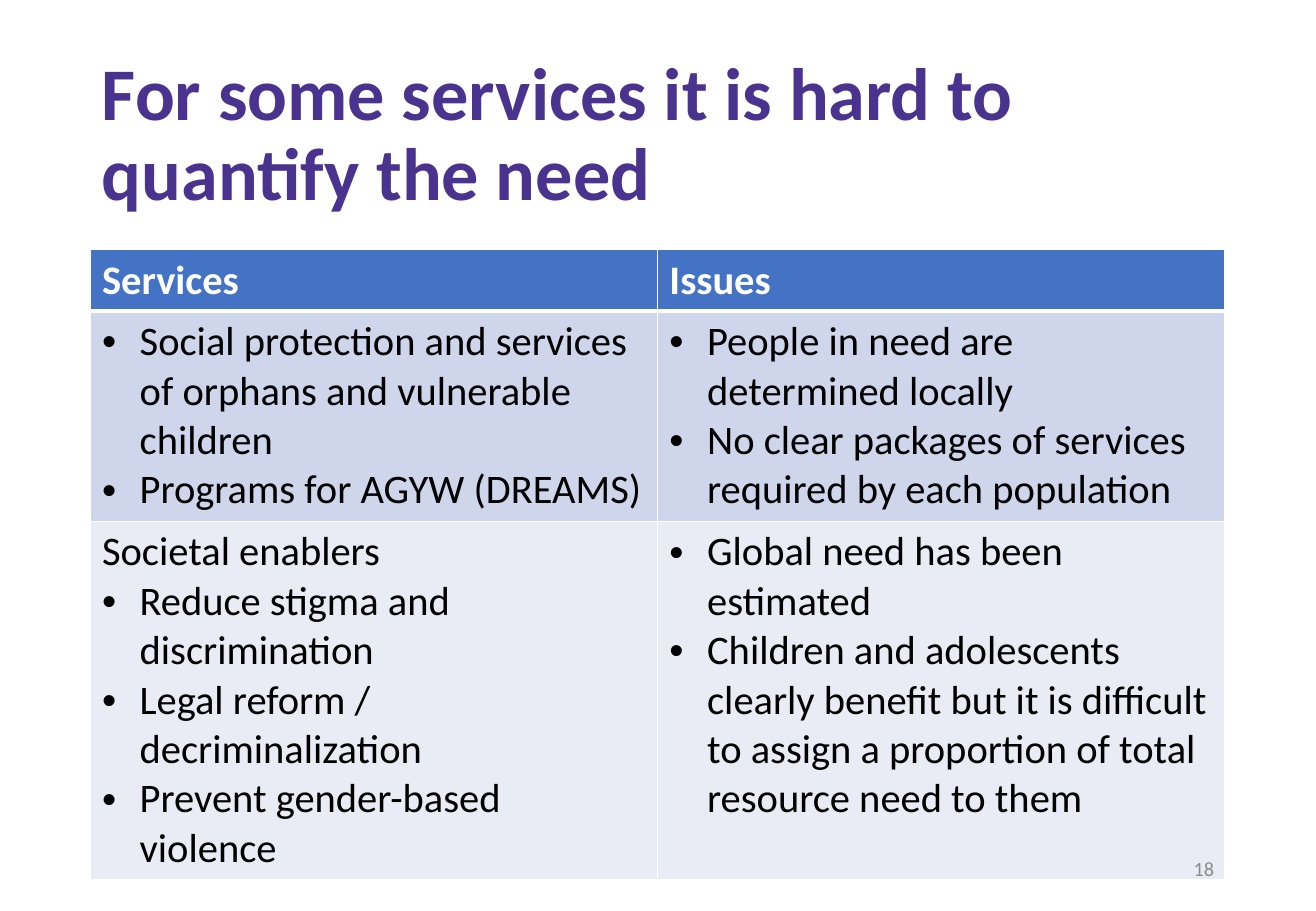
from lxml.etree import SubElement as Sub
from pptx import Presentation
from pptx.dml.color import RGBColor
from pptx.enum.text import MSO_ANCHOR as Anchor, PP_ALIGN as Align
from pptx.oxml.ns import qn
from pptx.util import Inches, Pt

WIDE, HIGH = Inches(10.83), Inches(7.5)
LEFT, SPAN = 6.83, 86.24
INDENT = Inches(0.31)

PURPLE = RGBColor(0x49, 0x33, 0x8F)
BLUE = RGBColor(0x44, 0x72, 0xC4)
MID = RGBColor(0xCF, 0xD5, 0xEA)
PALE = RGBColor(0xE9, 0xEB, 0xF5)
GRAY = RGBColor(0x8C, 0x8C, 0x8C)
WHITE = RGBColor(0xFF, 0xFF, 0xFF)
BLACK = RGBColor(0, 0, 0)

ROWS = [
    (6.76, BLUE, [["Services"], ["Issues"]]),
    (23.07, MID, [
        ["• Social protection and services of orphans and vulnerable children",
         "• Programs for AGYW (DREAMS)"],
        ["• People in need are determined locally",
         "• No clear packages of services required by each population"],
    ]),
    (39.33, PALE, [
        ["Societal enablers",
         "• Reduce stigma and discrimination",
         "• Legal reform / decriminalization",
         "• Prevent gender-based violence"],
        ["• Global need has been estimated",
         "• Children and adolescents clearly benefit but it is difficult "
         "to assign a proportion of total resource need to them"],
    ]),
]


def across(share):
    """Turn a percentage of the slide width into a length."""
    return int(WIDE * share / 100)


def down(share):
    """Turn a percentage of the slide height into a length."""
    return int(HIGH * share / 100)


def place(x, y, w, h):
    """Turn four percentages into left, top, width and height."""
    return across(x), down(y), across(w), down(h)


def write(para, text, size=24, color=BLACK, bold=False, align=Align.LEFT, lead=None):
    """Fill a paragraph with one formatted run."""
    para.alignment = align
    if lead:
        para.line_spacing = lead
    run = para.add_run()
    run.text = text
    font = run.font
    font.name, font.size, font.bold = "Calibri", Pt(size), bold
    font.color.rgb = color


def bullet(para):
    """Give a paragraph a hanging bullet."""
    props = para._p.get_or_add_pPr()
    props.set("marL", str(INDENT))
    props.set("indent", str(-INDENT))
    Sub(props, qn("a:buFont"), typeface="Arial")
    Sub(props, qn("a:buChar"), char="•")


def label(slide, box, text, **style):
    """Add a wrapped, vertically centred text box."""
    frame = slide.shapes.add_textbox(*box).text_frame
    frame.word_wrap = True
    frame.vertical_anchor = Anchor.MIDDLE
    write(frame.paragraphs[0], text, **style)


def border(cell, base):
    """Draw white cell borders with a chosen bottom width."""
    props = cell._tc.get_or_add_tcPr()
    for side, width in (("L", 1), ("R", 1), ("T", 1), ("B", base)):
        line = Sub(props, qn(f"a:ln{side}"), w=str(Pt(width)))
        fill = Sub(line, qn("a:solidFill"))
        Sub(fill, qn("a:srgbClr"), val=str(WHITE))


def fill_cell(cell, items, shade, head):
    """Style a cell and write its items."""
    border(cell, 3 if head else 1)
    cell.fill.solid()
    cell.fill.fore_color.rgb = shade
    frame = cell.text_frame
    for i, item in enumerate(items):
        para = frame.add_paragraph() if i else frame.paragraphs[0]
        write(para, item.removeprefix("• "), color=WHITE if head else BLACK, bold=head)
        if item.startswith("•"):
            bullet(para)


def grid(slide, box, rows):
    """Add the table of services and issues."""
    table = slide.shapes.add_table(len(rows), len(rows[0][2]), *box).table
    for r, (tall, shade, cells) in enumerate(rows):
        table.rows[r].height = down(tall)
        for c, items in enumerate(cells):
            fill_cell(table.cell(r, c), items, shade, r == 0)


def main():
    """Build and save the slide."""
    deck = Presentation()
    deck.slide_width, deck.slide_height = WIDE, HIGH
    slide = deck.slides.add_slide(deck.slide_layouts[6])
    label(slide, place(LEFT, 5.33, SPAN, 19.33),
          "For some services it is hard to quantify the need",
          size=44, color=PURPLE, bold=True, lead=0.9)
    total = sum(row[0] for row in ROWS)
    grid(slide, place(LEFT, 27.4, SPAN, total), ROWS)
    label(slide, place(70.64, 92.67, 22.53, 5.33), "18",
          size=12, color=GRAY, align=Align.RIGHT)
    deck.save("out.pptx")


if __name__ == "__main__":
    main()
